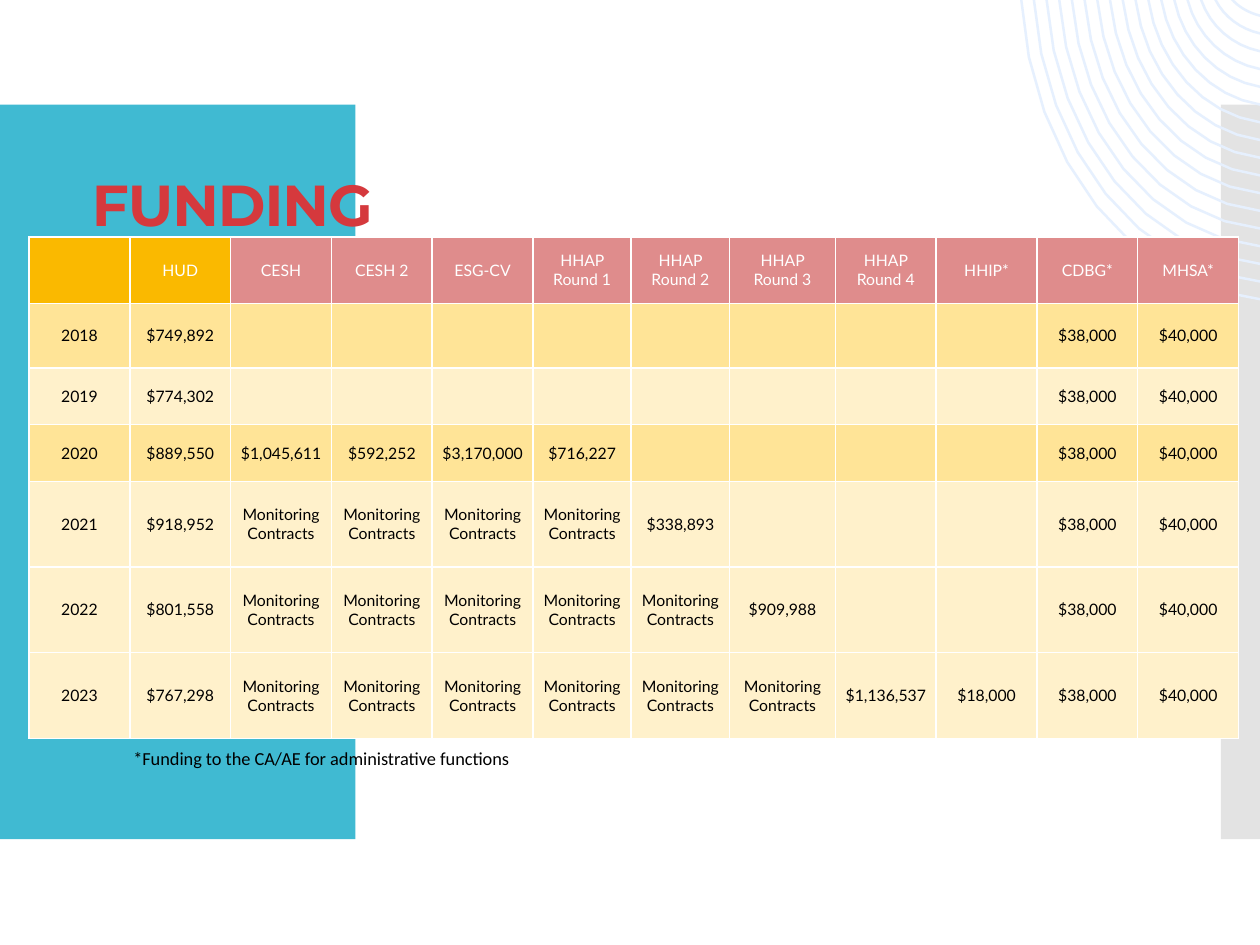
import math
from pptx import Presentation
from pptx.dml.color import RGBColor
from pptx.enum.shapes import MSO_SHAPE
from pptx.enum.text import MSO_ANCHOR, MSO_AUTO_SIZE, PP_ALIGN
from pptx.oxml import parse_xml
from pptx.oxml.ns import nsdecls, qn
from pptx.util import Inches, Pt

RECTANGLE = MSO_SHAPE.RECTANGLE
MIDDLE = MSO_ANCHOR.MIDDLE
FIXED_SIZE, FIT_TEXT = MSO_AUTO_SIZE.NONE, MSO_AUTO_SIZE.SHAPE_TO_FIT_TEXT
LEFT, CENTER = PP_ALIGN.LEFT, PP_ALIGN.CENTER

TITLE = "FUNDING"
FOOTNOTE = "*Funding to the CA/AE for administrative functions"
HEADERS = ["", "HUD", "CESH", "CESH 2", "ESG-CV", "HHAP Round 1", "HHAP Round 2",
           "HHAP Round 3", "HHAP Round 4", "HHIP*", "CDBG*", "MHSA*"]
MONITORING = "Monitoring Contracts"
YEARLY_GRANTS = ["$38,000", "$40,000"]
FUNDING = [
    ("2018", "$749,892", []),
    ("2019", "$774,302", []),
    ("2020", "$889,550", ["$1,045,611", "$592,252", "$3,170,000", "$716,227"]),
    ("2021", "$918,952", [MONITORING] * 4 + ["$338,893"]),
    ("2022", "$801,558", [MONITORING] * 5 + ["$909,988"]),
    ("2023", "$767,298", [MONITORING] * 6 + ["$1,136,537", "$18,000"]),
]
GRANT_COLUMNS = 8
DARK_YEARS = {"2018", "2020"}
COLUMN_WIDTHS = [0.8] * 5 + [0.78] * 2 + [0.84] + [0.8] * 4
ROW_HEIGHTS = [0.53, 0.51, 0.45, 0.45, 0.68, 0.68, 0.68]

THEME = {
    "panel": "40BAD2", "strip": "C8C8C8", "rings": "E6F0FE",
    "hud": "FAB900", "grant": "DF8C8C", "dark_band": "FFE497", "light_band": "FFF1CB",
    "title": {"name": "Montserrat", "size": 33, "bold": True, "color": "D5393D"},
    "header": {"name": "Lato", "size": 9, "bold": False, "color": "FFFFFF"},
    "body": {"name": "Lato", "size": 9, "bold": False, "color": "000000"},
    "footnote": {"name": "Calibri", "size": 10.5, "bold": False, "color": "000000"},
}
RINGS = {"count": 17, "center": (10.13, -0.2), "radii": (2.04, 2.59),
         "step": (0.1, 0.14), "thickness": (0.02, 0.02), "segments": 8}
PAGE_WIDTH, PAGE_HEIGHT = 10, 7.5


def write(para, text, style, align=LEFT):
    para.alignment = align
    span = para.add_run()
    span.text = text
    values = {"name": style["name"], "size": Pt(style["size"]), "bold": style["bold"]}
    for name, value in values.items():
        setattr(span.font, name, value)
    span.font.color.rgb = RGBColor.from_string(style["color"])
    return span


def paint(shape, color):
    shape.shadow.inherit = False
    shape.fill.solid()
    shape.fill.fore_color.rgb = RGBColor.from_string(color)
    shape.line.fill.background()


def add_panel(page, left, width, color):
    panel = page.shapes.add_shape(RECTANGLE, Inches(left), Inches(0.83), Inches(width), Inches(5.83))
    paint(panel, color)
    return panel


def arc(radius_x, radius_y):
    center_x, center_y = RINGS["center"]
    start = math.asin(-center_y / radius_y)
    end = math.acos((center_x - PAGE_WIDTH) / radius_x)
    count = RINGS["segments"]
    angles = [start + (end - start) * index / count for index in range(count + 1)]
    return [(Inches(center_x - radius_x * math.cos(angle)),
             Inches(center_y + radius_y * math.sin(angle))) for angle in angles]


def add_rings(page):
    builder = None
    for ring in range(RINGS["count"]):
        outer = [radius - ring * step for radius, step in zip(RINGS["radii"], RINGS["step"])]
        inner = [radius - depth for radius, depth in zip(outer, RINGS["thickness"])]
        outline = arc(*outer) + arc(*inner)[::-1]
        if builder is None:
            builder = page.shapes.build_freeform(*outline[0])
        else:
            builder.move_to(*outline[0])
        builder.add_line_segments(outline[1:], close=True)
    paint(builder.convert_to_shape(), THEME["rings"])


def fill_cell(cell, text, color, style):
    cell.fill.solid()
    cell.fill.fore_color.rgb = RGBColor.from_string(color)
    if not text:
        return
    margins = {"margin_left": 0.07, "margin_right": 0.07, "margin_top": 0.04, "margin_bottom": 0.04}
    for name, value in margins.items():
        setattr(cell, name, Inches(value))
    cell.vertical_anchor = MIDDLE
    write(cell.text_frame.paragraphs[0], text, style, CENTER)


def add_funding_table(page):
    table = page.shapes.add_table(
        len(ROW_HEIGHTS), len(COLUMN_WIDTHS), Inches(0.23), Inches(1.88),
        Inches(sum(COLUMN_WIDTHS)), Inches(sum(ROW_HEIGHTS))).table
    for column, width in zip(table.columns, COLUMN_WIDTHS):
        column.width = Inches(width)
    for row, height in zip(table.rows, ROW_HEIGHTS):
        row.height = Inches(height)
    for column, text in enumerate(HEADERS):
        color = THEME["hud"] if column < 2 else THEME["grant"]
        fill_cell(table.cell(0, column), text, color, THEME["header"])
    for row, (year, hud, grants) in enumerate(FUNDING, start=1):
        color = THEME["dark_band"] if year in DARK_YEARS else THEME["light_band"]
        blanks = [""] * (GRANT_COLUMNS - len(grants))
        for column, text in enumerate([year, hud] + grants + blanks + YEARLY_GRANTS):
            fill_cell(table.cell(row, column), text, color, THEME["body"])


def add_title(page):
    title = page.shapes.title
    page.shapes._spTree.append(title._element)
    place = {"left": 0.63, "top": 1.3, "width": 8.75, "height": 0.63}
    for name, value in place.items():
        setattr(title, name, Inches(value))
    frame = title.text_frame
    frame.vertical_anchor = MIDDLE
    frame.auto_size = FIXED_SIZE
    span = write(frame.paragraphs[0], TITLE, THEME["title"])
    span.font._element.set("spc", "-60")


def add_footnote(page):
    box = page.shapes.add_textbox(Inches(0.96), Inches(5.88), Inches(3.33), Inches(0.28))
    box.text_frame.word_wrap = False
    box.text_frame.auto_size = FIT_TEXT
    write(box.text_frame.paragraphs[0], FOOTNOTE, THEME["footnote"])


def main():
    deck = Presentation()
    deck.slide_width, deck.slide_height = Inches(PAGE_WIDTH), Inches(PAGE_HEIGHT)
    page = deck.slides.add_slide(deck.slide_layouts[5])
    add_panel(page, 0, 2.82, THEME["panel"])
    strip = add_panel(page, 9.69, 0.31, THEME["strip"])
    strip_color = strip._element.spPr.find(qn("a:solidFill"))[0]
    strip_color.append(parse_xml(f'<a:alpha {nsdecls("a")} val="50000"/>'))
    add_rings(page)
    add_title(page)
    add_funding_table(page)
    add_footnote(page)
    deck.save("out.pptx")


if __name__ == "__main__":
    main()
